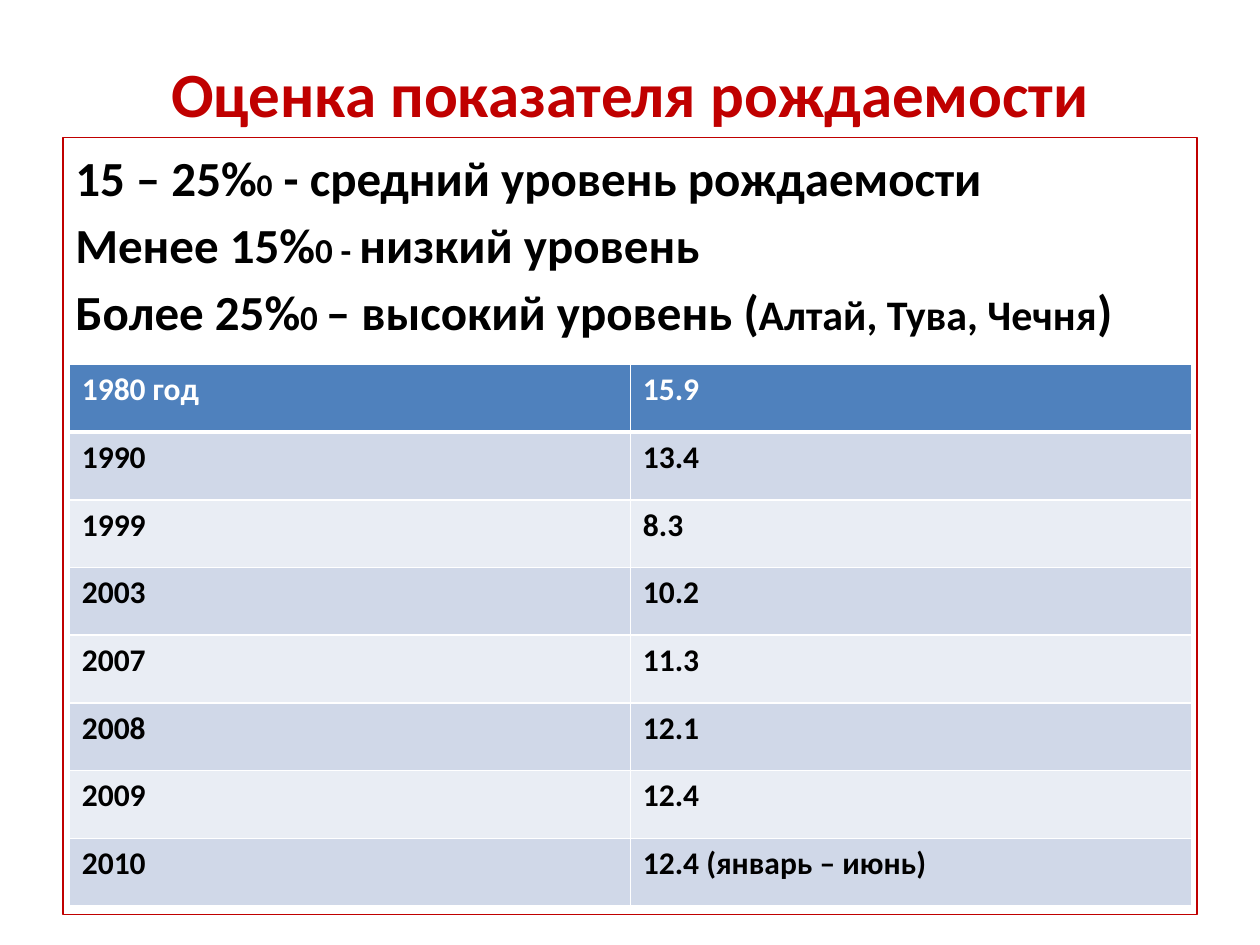
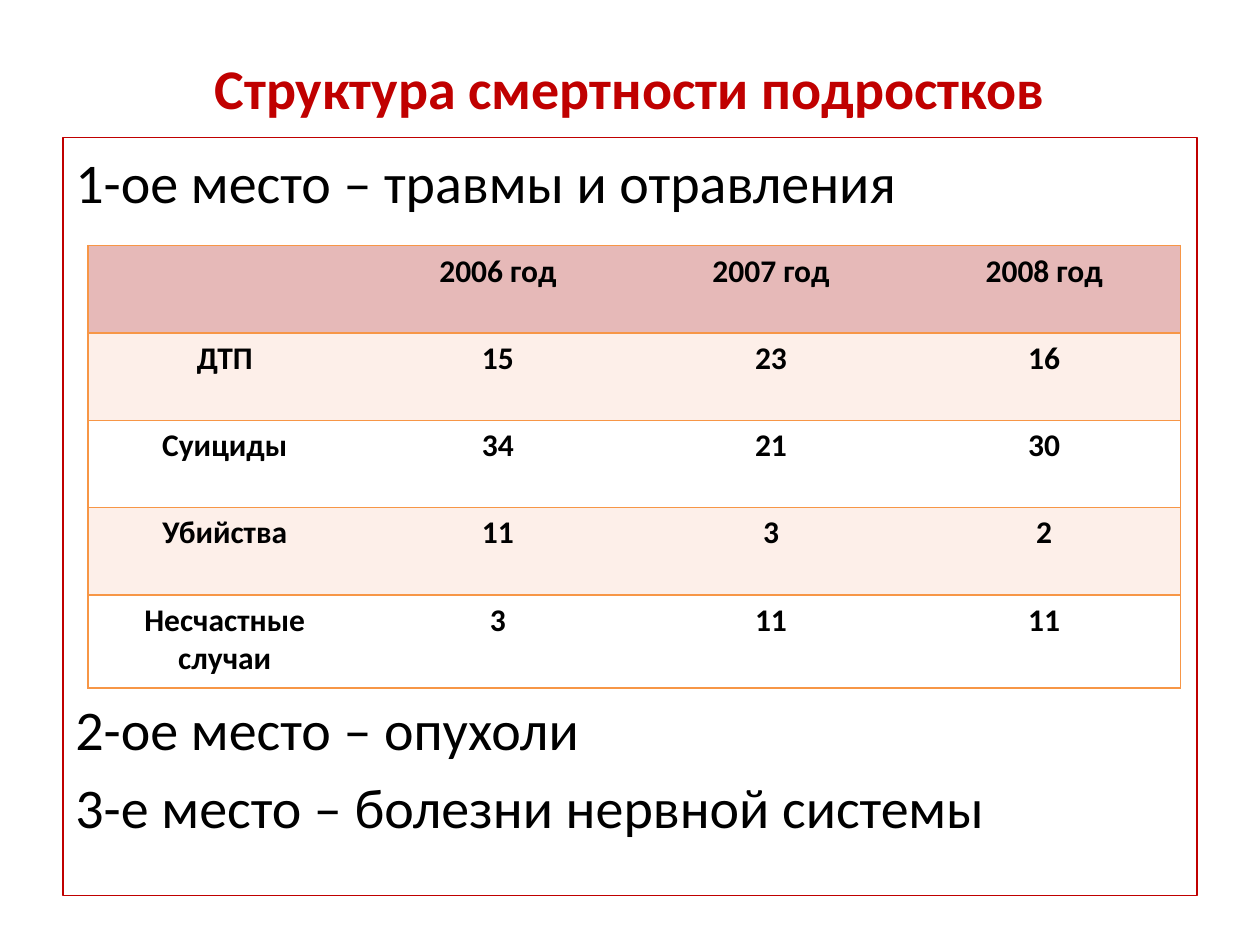
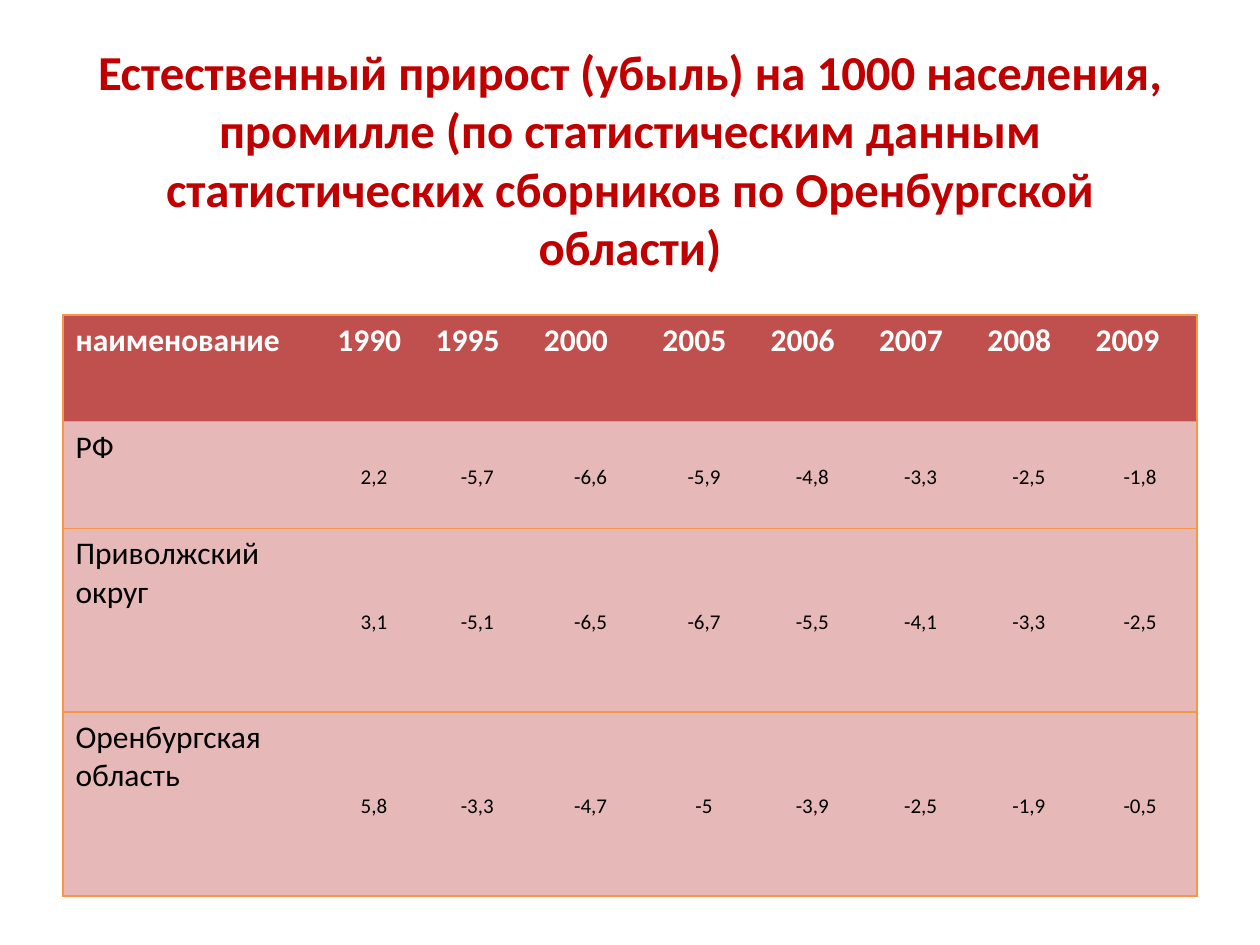
import pptx
import pptx.util
import pptx.dml.color
import pptx.enum.shapes
import pptx.enum.text
import pptx.oxml
import pptx.oxml.ns

Pt = pptx.util.Pt
RGBColor = pptx.dml.color.RGBColor
ALIGN = pptx.enum.text.PP_ALIGN
ANCHOR = pptx.enum.text.MSO_ANCHOR

FONT = "Calibri"
NO_TABLE_STYLE = "{2D5ABB26-0587-4C30-8999-92F81FD0307C}"
COLORS = {
    "title": "C00000", "text": "000000", "white": "FFFFFF", "orange": "F79646",
    "blue": "4F81BD", "blue band": "D0D8E8", "pale blue": "E9EDF4",
    "red": "C0504D", "pink": "E6B9B8", "peach": "FDEFE9",
}


def write_text(frame, paragraphs, size=18, color="text", bold=False, align=ALIGN.LEFT,
               anchor=ANCHOR.TOP, gaps=(), after=None, line_spacing=None):
    """Each paragraph is a list of (text, size) runs, or a string in the common size."""
    frame.word_wrap = True
    frame.vertical_anchor = anchor
    for index, runs in enumerate(paragraphs):
        paragraph = frame.paragraphs[0] if index == 0 else frame.add_paragraph()
        paragraph.alignment = align
        paragraph.line_spacing = line_spacing
        if index:
            paragraph.space_before = Pt(gaps[index - 1])
        if after:
            paragraph.space_after = Pt(after)
        for text, run_size in [(runs, size)] if isinstance(runs, str) else runs:
            run = paragraph.add_run()
            run.text = text
            run.font.name = FONT
            run.font.size = Pt(run_size)
            run.font.bold = bold
            run.font.color.rgb = RGBColor.from_string(COLORS[color])


def set_borders(cell, color, widths):
    """Widths maps the sides L, R, T, B to points."""
    properties = cell._tc.get_or_add_tcPr()
    for side in "LRTB":
        if side in widths:
            properties.append(pptx.oxml.parse_xml(
                f'<a:ln{side} {pptx.oxml.ns.nsdecls("a")} w="{Pt(widths[side])}"><a:solidFill>'
                f'<a:srgbClr val="{COLORS[color]}"/></a:solidFill></a:ln{side}>'))


presentation = pptx.Presentation()
presentation.slide_width, presentation.slide_height = Pt(720), Pt(540)

slides = [
    {
        "title": "Оценка показателя рождаемости", "title size": 36, "title height": 62.6,
        "body height": 444.2, "body size": 28, "body bold": True, "gaps": [4.8, 4.8],
        "body": [
            [("15 – 25%", 28), ("0", 18), (" - средний уровень рождаемости", 28)],
            [("Менее 15%", 28), ("0 - ", 20), ("низкий уровень", 28)],
            [("Более 25%", 28), ("0 ", 20), ("– высокий уровень (", 28),
             ("Алтай, Тува, Чечня", 24), (")", 28)],
        ],
        "place": (39.6, 208.2), "columns": [320.6] * 2, "rows": [38.7] * 8,
        "fills": ["blue"] + ["blue band", "pale blue"] * 3 + ["blue band"],
        "header color": "white", "grid": True, "bold": True, "align": ALIGN.LEFT,
        "cells": [
            ["1980 год", "15.9"], ["1990", "13.4"], ["1999", "8.3"], ["2003", "10.2"],
            ["2007", "11.3"], ["2008", "12.1"], ["2009", "12.4"],
            ["2010", "12.4 (январь – июнь)"],
        ],
    },
    {
        "title": "Структура смертности подростков", "title size": 32, "title height": 56.9,
        "body height": 433.4, "body size": 32, "body bold": False, "gaps": [274.6, 5.7],
        "body": ["1-ое место – травмы и отравления", "2-ое место – опухоли",
                 "3-е место – болезни нервной системы"],
        "place": (50.4, 140.4), "columns": [156.1] * 4, "rows": [49.9] * 4 + [53.3],
        "fills": ["pink", "peach", "white", "peach", "white"],
        "header color": "text", "grid": False, "bold": True, "align": ALIGN.CENTER,
        "cells": [
            ["", "2006 год", "2007 год", "2008 год"],
            ["ДТП", "15", "23", "16"],
            ["Суициды", "34", "21", "30"],
            ["Убийства", "11", "3", "2"],
            ["Несчастные случаи", "3", "11", "11"],
        ],
    },
    {
        "title": "Естественный прирост (убыль) на 1000 населения, промилле (по статистическим "
                 "данным статистических сборников по Оренбургской области)",
        "title size": 27.9, "title height": 151.9, "title insets": (0, 14),
        "place": (36, 180), "rows": [61, 61, 105, 105],
        "columns": [149.6, 56.2, 61.9, 67.7] + [61.9] * 4 + [65.2],
        "fills": ["red", "pink", "pink", "pink"],
        "header color": "white", "grid": False, "bold": False, "align": ALIGN.LEFT,
        "small values": True,
        "cells": [
            ["наименование", "1990", "1995", "2000", "2005", "2006", "2007", "2008", "2009"],
            ["РФ", "2,2", "-5,7", "-6,6", "-5,9", "-4,8", "-3,3", "-2,5", "-1,8"],
            ["Приволжский округ", "3,1", "-5,1", "-6,5", "-6,7", "-5,5", "-4,1", "-3,3", "-2,5"],
            ["Оренбургская область", "5,8", "-3,3", "-4,7", "-5", "-3,9", "-2,5", "-1,9", "-0,5"],
        ],
    },
]

for content in slides:
    slide = presentation.slides.add_slide(presentation.slide_layouts[6])

    # Title
    title = slide.shapes.add_textbox(Pt(36), Pt(21.6), Pt(648), Pt(content["title height"]))
    top_inset, bottom_inset = content.get("title insets", (3.6, 3.6))
    title.text_frame.margin_top = Pt(top_inset)
    title.text_frame.margin_bottom = Pt(bottom_inset)
    write_text(title.text_frame, [content["title"]], size=content["title size"],
               color="title", bold=True, align=ALIGN.CENTER, anchor=ANCHOR.MIDDLE)

    # Framed body text
    if "body" in content:
        body = slide.shapes.add_shape(pptx.enum.shapes.MSO_SHAPE.RECTANGLE,
                                      Pt(36), Pt(78.5), Pt(648), Pt(content["body height"]))
        body.shadow.inherit = False
        body.fill.background()
        body.line.color.rgb = RGBColor.from_string(COLORS["title"])
        body.line.width = Pt(0.75)
        body.text_frame.margin_top = Pt(5.6)
        write_text(body.text_frame, content["body"], size=content["body size"],
                   bold=content["body bold"], gaps=content["gaps"])

    # Table
    columns, rows = content["columns"], content["rows"]
    left, top = content["place"]
    table = slide.shapes.add_table(len(rows), len(columns), Pt(left), Pt(top),
                                   Pt(sum(columns)), Pt(sum(rows))).table
    table.first_row = table.horz_banding = False
    table._tbl.tblPr.find(pptx.oxml.ns.qn("a:tableStyleId")).text = NO_TABLE_STYLE
    for column, width in zip(table.columns, columns):
        column.width = Pt(width)
    for row, height in zip(table.rows, rows):
        row.height = Pt(height)

    for row_index, texts in enumerate(content["cells"]):
        for column_index, text in enumerate(texts):
            cell = table.cell(row_index, column_index)
            if content["grid"]:
                set_borders(cell, "white", {"L": 1, "R": 1, "T": 3 if row_index == 1 else 1,
                                            "B": 3 if row_index == 0 else 1})
            else:
                widths = {"T": 1, "B": 1}
                if column_index == 0:
                    widths["L"] = 1
                if column_index == len(columns) - 1:
                    widths["R"] = 1
                set_borders(cell, "orange", widths)
            cell.fill.solid()
            cell.fill.fore_color.rgb = RGBColor.from_string(COLORS[content["fills"][row_index]])

            if content.get("small values") and row_index and column_index:
                cell.margin_left = cell.margin_right = cell.margin_top = cell.margin_bottom = 0
                cell.vertical_anchor = ANCHOR.MIDDLE
                write_text(cell.text_frame, [text], size=12, align=ALIGN.CENTER,
                           anchor=None, after=10, line_spacing=1.15)
            elif text:
                write_text(cell.text_frame, [text], anchor=None, align=content["align"],
                           color="text" if row_index else content["header color"],
                           bold=content["bold"] or row_index == 0)

presentation.save("out.pptx")
